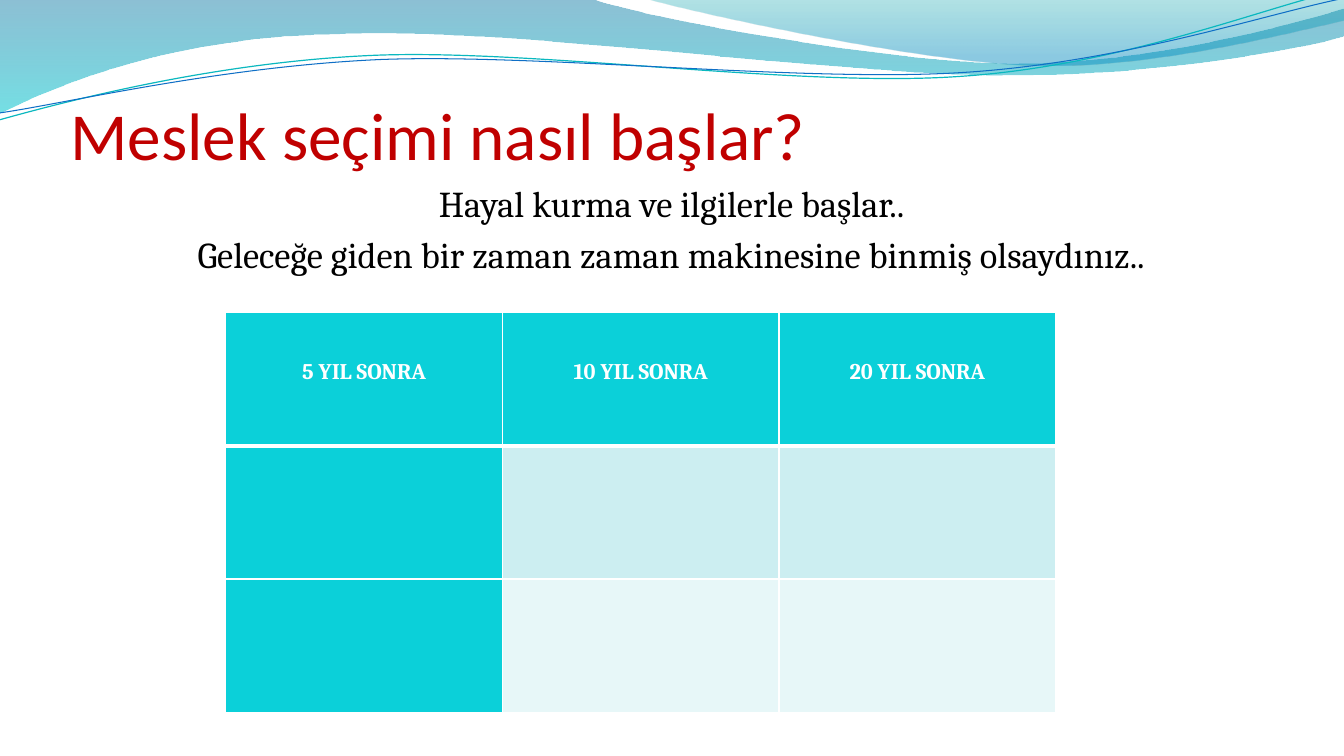
"""Build the slide about how choosing a career begins."""
from lxml import etree
from pptx import Presentation
from pptx.dml.color import RGBColor
from pptx.enum.text import MSO_ANCHOR, PP_ALIGN
from pptx.oxml.ns import qn
from pptx.util import Pt

CENTER, LEFT = PP_ALIGN.CENTER, PP_ALIGN.LEFT
TOP, BOTTOM = MSO_ANCHOR.TOP, MSO_ANCHOR.BOTTOM

THEME = {
    "head": ("Calibri", 48, "C00000", False),
    "body": ("Cambria", 26, "000000", False),
    "cell": ("Cambria", 16, "FFFFFF", True),
    "main": "0BD0D9", "bands": ("CCEEF1", "E7F7F8"), "rule": "FFFFFF",
    "thin": 1, "thick": 3,
}
TITLE = "Meslek seçimi nasıl başlar?"
LINES = [
    "Hayal kurma ve ilgilerle başlar..",
    "Geleceğe giden bir zaman zaman makinesine binmiş olsaydınız..",
]
GRID = [
    ["5 YIL SONRA", "10 YIL SONRA", "20 YIL SONRA"],
    ["", "", ""],
    ["", "", ""],
]
BANDS = [
    ([(0, 0), (422.6, -0.7),
      (456.5, 12.2, 637.2, 45.4, 727.9, 45.4),
      (819.4, 45.4, 920.2, 18.7, 959.8, 6.5), (961.2, 25.9),
      (943.9, 31.7, 835.2, 54.7, 715.7, 54),
      (596.9, 54, 366.5, 20.2, 247, 24.5),
      (123.8, 25.9, 43.9, 59.8, -0.7, 81.4)],
     [(0, "0074A1", 45), (100, "00C6CF", 55)]),
    ([(460.1, -0.7),
      (488.9, 7.9, 654.5, 44.6, 738, 46.8),
      (821.5, 49.7, 923, 23, 959.8, 15.1), (959.8, 0)],
     [(0, "00A1A9", 30), (80, "008BBF", 45)]),
]
WAVES = [
    ([(-0.7, 85.7),
      (46.1, 72.7, 151.9, 44.6, 265.7, 39.6),
      (379.4, 34.6, 568.8, 62.6, 684, 54.7),
      (799.2, 47.5, 901.4, 5.8, 958.3, -7.2)], "0AB8BF", 0.85),
    ([(0, 80.6),
      (45.4, 74.2, 157, 47.5, 272.2, 42.5),
      (386.6, 38.2, 573.1, 59, 687.6, 51.8),
      (802.8, 44.6, 903.6, 10.1, 960.5, -1.4)], "0F6FC6", 0.75),
]


def rgb(code):
    return RGBColor.from_string(code)


def outline(slide, parts, close):
    """Draw a path in which a part of six numbers is a Bézier segment."""
    dots = [(Pt(part[i]), Pt(part[i + 1]))
            for part in parts for i in range(0, len(part), 2)]
    pen = slide.shapes.build_freeform(*dots[0])
    pen.add_line_segments(dots[1:], close=close)
    shape = pen.convert_to_shape()
    shape.shadow.inherit = False
    legs = iter(list(shape.element.spPr.iter(qn("a:lnTo"))))
    for part in parts[1:]:
        leg = next(legs)
        if len(part) == 6:
            curve = etree.Element(qn("a:cubicBezTo"))
            leg.addprevious(curve)
            for piece in (leg, next(legs), next(legs)):
                curve.append(piece[0])
                piece.getparent().remove(piece)
    return shape


def add_band(slide, parts, stops):
    shape = outline(slide, parts, True)
    shape.line.fill.background()
    shape.fill.gradient()
    shape.fill.gradient_angle = 270
    for stop, (place, color, _) in zip(shape.fill.gradient_stops, stops):
        stop.position = place / 100
        stop.color.rgb = rgb(color)
    tags = shape.element.spPr.iter(qn("a:srgbClr"))
    for tag, (_, _, alpha) in zip(tags, stops):
        etree.SubElement(tag, qn("a:alpha"), val=str(alpha * 1000))


def add_wave(slide, parts, color, width):
    shape = outline(slide, parts, False)
    shape.fill.background()
    shape.line.color.rgb = rgb(color)
    shape.line.width = Pt(width)


def write(para, text, style, align, before=0):
    face, size, color, bold = THEME[style]
    para.alignment = align
    para.space_before = Pt(before)
    run = para.add_run()
    run.text = text
    font = run.font
    font.name, font.size, font.bold = face, Pt(size), bold
    font.color.rgb = rgb(color)


def add_text(slide, box, lines, style, align, anchor, inset, before):
    frame = slide.shapes.add_textbox(*map(Pt, box)).text_frame
    frame.word_wrap = True
    frame.vertical_anchor = anchor
    frame.margin_left = frame.margin_right = Pt(inset)
    frame.margin_top = Pt(3.6)
    frame.margin_bottom = Pt(0)
    for i, line in enumerate(lines):
        para = frame.add_paragraph() if i else frame.paragraphs[0]
        write(para, line, style, align, before)


def add_edge(cell, side, width):
    edge = etree.SubElement(cell._tc.get_or_add_tcPr(), qn("a:ln" + side),
                            w=str(Pt(width)))
    fill = etree.SubElement(edge, qn("a:solidFill"))
    etree.SubElement(fill, qn("a:srgbClr"), val=THEME["rule"])


def add_grid(slide, left, top, width, height):
    rows, cols = len(GRID), len(GRID[0])
    table = slide.shapes.add_table(rows, cols, Pt(left), Pt(top),
                                   Pt(width), Pt(height)).table
    for row in table.rows:
        row.height = Pt(height / rows)
    for col in table.columns:
        col.width = Pt(width / cols)
    for r, texts in enumerate(GRID):
        for c, text in enumerate(texts):
            cell = table.cell(r, c)
            for side in "LRTB":
                heavy = (r, side) in ((0, "B"), (1, "T"))
                add_edge(cell, side, THEME["thick" if heavy else "thin"])
            lead = r == 0 or c == 0
            cell.fill.solid()
            cell.fill.fore_color.rgb = rgb(THEME["main"] if lead
                                           else THEME["bands"][r - 1])
            if text:
                cell.margin_left = cell.margin_right = Pt(5)
                cell.margin_top, cell.margin_bottom = Pt(33.5), Pt(0)
                write(cell.text_frame.paragraphs[0], text, "cell", CENTER)


def main():
    deck = Presentation()
    deck.slide_width, deck.slide_height = Pt(960), Pt(540)
    slide = deck.slides.add_slide(deck.slide_layouts[6])
    for band in BANDS:
        add_band(slide, *band)
    for wave in WAVES:
        add_wave(slide, *wave)
    add_text(slide, (50.4, 34, 864, 90), [TITLE], "head", LEFT, BOTTOM, 0, 0)
    add_text(slide, (48, 126, 864, 414), LINES, "body", CENTER, TOP, 7.2, 5.2)
    add_grid(slide, 161.3, 223.2, 592.8, 285.6)
    deck.save("out.pptx")


if __name__ == "__main__":
    main()
